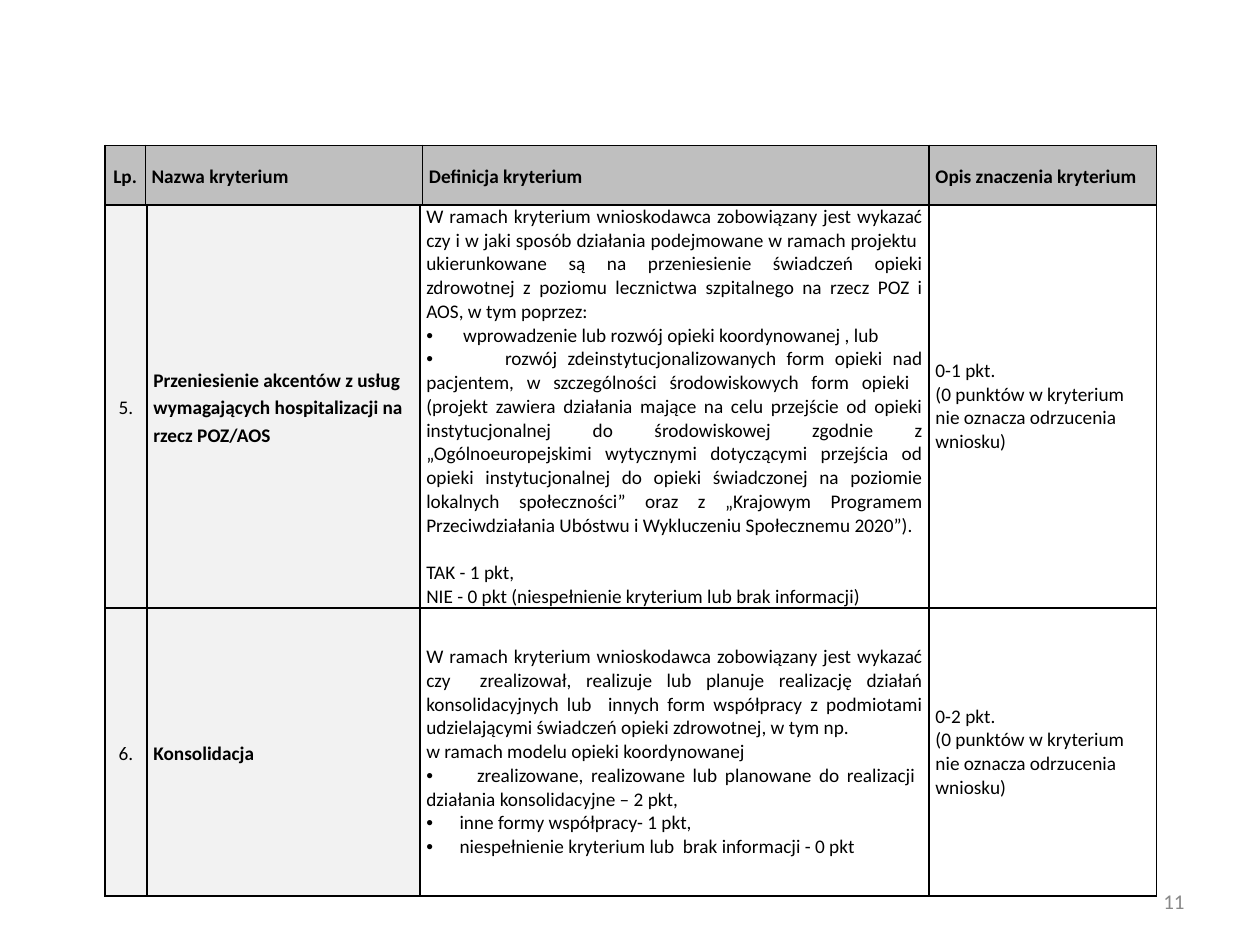
import pptx
import pptx.dml.color
import pptx.enum.text
import pptx.oxml.ns
import pptx.util
from dataclasses import dataclass
from lxml import etree

Pt = pptx.util.Pt
Align = pptx.enum.text.PP_ALIGN
Anchor = pptx.enum.text.MSO_ANCHOR
qn = pptx.oxml.ns.qn


@dataclass(frozen=True)
class Theme:
    font: str = "Calibri"
    text: str = "000000"
    muted: str = "898989"
    header_fill: str = "BFBFBF"
    label_fill: str = "F2F2F2"
    body_size: float = 11
    number_size: float = 12
    border: float = 1
    line_spacing: float = 1.15
    space_after: float = 10
    block_gap: float = 13.5


@dataclass(frozen=True)
class Line:
    text: str
    bullet_tab: float = 0
    space_before: float = 0


THEME = Theme()

HEADERS = ["Lp.", "Nazwa kryterium", "Definicja kryterium", "Opis znaczenia kryterium"]

CRITERIA = [
    (
        "5.",
        "Przeniesienie akcentów z usług wymagających hospitalizacji na rzecz POZ/AOS",
        [
            Line("W ramach kryterium wnioskodawca zobowiązany jest wykazać czy i w jaki "
                 "sposób działania podejmowane w ramach projektu  ukierunkowane są na "
                 "przeniesienie świadczeń opieki zdrowotnej z poziomu lecznictwa "
                 "szpitalnego na rzecz POZ i AOS, w tym poprzez:"),
            Line("wprowadzenie lub rozwój opieki koordynowanej , lub", 21),
            Line("rozwój zdeinstytucjonalizowanych form opieki nad pacjentem, w "
                 "szczególności środowiskowych form opieki  (projekt zawiera działania "
                 "mające na celu przejście od opieki instytucjonalnej do środowiskowej "
                 "zgodnie z „Ogólnoeuropejskimi wytycznymi dotyczącymi przejścia od "
                 "opieki instytucjonalnej do opieki świadczonej na poziomie lokalnych "
                 "społeczności” oraz z „Krajowym Programem Przeciwdziałania Ubóstwu i "
                 "Wykluczeniu Społecznemu 2020”).", 45),
            Line("TAK - 1 pkt,", space_before=THEME.block_gap),
            Line("NIE - 0 pkt (niespełnienie kryterium lub brak informacji)"),
        ],
        "0-1 pkt.",
    ),
    (
        "6.",
        "Konsolidacja",
        [
            Line("W ramach kryterium wnioskodawca zobowiązany jest wykazać czy  "
                 "zrealizował, realizuje lub planuje realizację działań "
                 "konsolidacyjnych lub  innych form współpracy z podmiotami "
                 "udzielającymi świadczeń opieki zdrowotnej, w tym np."),
            Line("w ramach modelu opieki koordynowanej"),
            Line("zrealizowane, realizowane lub planowane do realizacji  działania "
                 "konsolidacyjne – 2 pkt,", 29),
            Line("inne formy współpracy- 1 pkt,", 19),
            Line("niespełnienie kryterium lub  brak informacji - 0 pkt", 19),
        ],
        "0-2 pkt.",
    ),
]

SCORE_NOTE = ["(0 punktów w kryterium", "nie oznacza odrzucenia wniosku)"]


def add_span(para, text, size, color, bold=False):
    span = para.add_run()
    span.text = text
    span.font.name = THEME.font
    span.font.size = Pt(size)
    span.font.bold = bold
    span.font.color.rgb = pptx.dml.color.RGBColor.from_string(color)


def add_bullet(para, tab):
    props = para._p.get_or_add_pPr()
    props.set("marL", "0")
    props.set("indent", "0")
    etree.SubElement(props, qn("a:buFont"), typeface="Arial")
    etree.SubElement(props, qn("a:buChar"), char="•")
    tabs = etree.SubElement(props, qn("a:tabLst"))
    etree.SubElement(tabs, qn("a:tab"), pos=str(Pt(tab)), algn="l")


def set_borders(cell):
    props = cell._tc.get_or_add_tcPr()
    for index, side in enumerate(("a:lnL", "a:lnR", "a:lnT", "a:lnB")):
        edge = etree.Element(qn(side), w=str(Pt(THEME.border)))
        fill = etree.SubElement(edge, qn("a:solidFill"))
        etree.SubElement(fill, qn("a:srgbClr"), val=THEME.text)
        props.insert(index, edge)


def fill_cell(cell, lines, align=Align.LEFT, bold=False, fill=None, spaced=False):
    cell.margin_left = cell.margin_right = Pt(3.6)
    cell.margin_top = cell.margin_bottom = Pt(0)
    cell.vertical_anchor = Anchor.MIDDLE
    if fill:
        cell.fill.solid()
        cell.fill.fore_color.rgb = pptx.dml.color.RGBColor.from_string(fill)
    else:
        cell.fill.background()
    set_borders(cell)
    frame = cell.text_frame
    for index, line in enumerate(lines):
        para = frame.add_paragraph() if index else frame.paragraphs[0]
        para.alignment = align
        if spaced:
            para.line_spacing = THEME.line_spacing
            para.space_after = Pt(THEME.space_after)
        if line.space_before:
            para.space_before = Pt(line.space_before)
        text = line.text
        if line.bullet_tab:
            add_bullet(para, line.bullet_tab)
            text = "\t" + text
        add_span(para, text, THEME.body_size, THEME.text, bold)


def add_grid(page, left, top, widths, heights):
    table = page.shapes.add_table(len(heights), len(widths), Pt(left), Pt(top),
                                  Pt(sum(widths)), Pt(sum(heights))).table
    table.first_row = table.horz_banding = False
    for column, width in zip(table.columns, widths):
        column.width = Pt(width)
    for row, height in zip(table.rows, heights):
        row.height = Pt(height)
    return table


def add_header(page, left, top, height):
    table = add_grid(page, left, top, [23, 158.5, 289.5, 130], [height])
    for column, title in enumerate(HEADERS):
        fill_cell(table.cell(0, column), [Line(title)],
                  Align.LEFT if column else Align.CENTER,
                  bold=True, fill=THEME.header_fill, spaced=True)


def add_criteria(page, left, top, heights):
    table = add_grid(page, left, top, [24, 156, 291, 130], heights)
    for row, (number, name, definition, score) in enumerate(CRITERIA):
        fill_cell(table.cell(row, 0), [Line(number)], Align.CENTER,
                  fill=THEME.label_fill, spaced=True)
        fill_cell(table.cell(row, 1), [Line(name)], bold=True,
                  fill=THEME.label_fill, spaced=True)
        fill_cell(table.cell(row, 2), definition, Align.JUSTIFY)
        fill_cell(table.cell(row, 3), [Line(text) for text in [score] + SCORE_NOTE])


def add_page_number(page, left, top, width, height):
    box = page.shapes.add_textbox(Pt(left), Pt(top), Pt(width), Pt(height))
    frame = box.text_frame
    frame.word_wrap = True
    frame.vertical_anchor = Anchor.MIDDLE
    para = frame.paragraphs[0]
    para.alignment = Align.RIGHT
    add_span(para, "11", THEME.number_size, THEME.muted)


def main():
    deck = pptx.Presentation()
    deck.slide_width, deck.slide_height = Pt(720), Pt(540)
    page = deck.slides.add_slide(deck.slide_layouts[6])
    left, top, header_height = 60, 83, 34
    add_page_number(page, 516, 500.5, 168, 29)
    add_header(page, left, top, header_height)
    add_criteria(page, left, top + header_height, [230.5, 164.5])
    deck.save("out.pptx")


if __name__ == "__main__":
    main()
